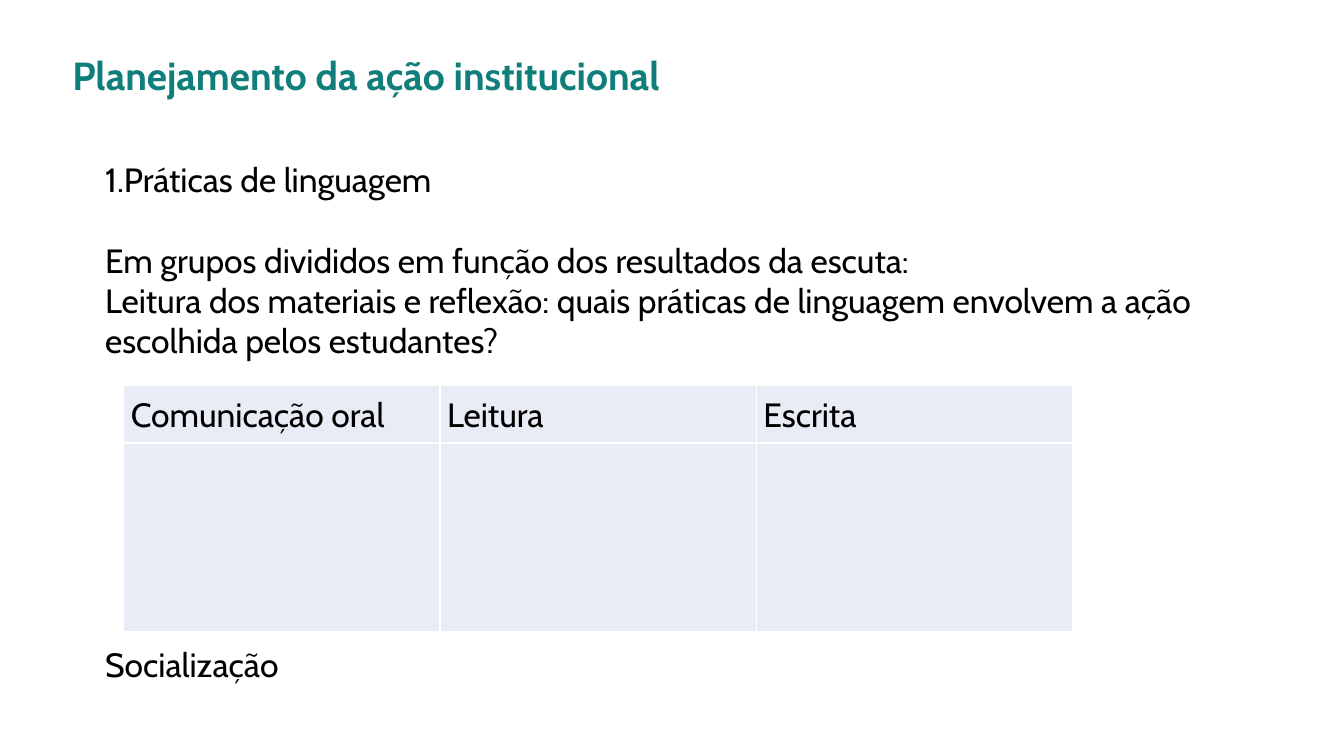
from dataclasses import dataclass

from lxml import etree
from pptx import Presentation
from pptx.dml.color import RGBColor
from pptx.enum.text import MSO_ANCHOR, MSO_AUTO_SIZE, PP_ALIGN
from pptx.oxml.ns import qn
from pptx.util import Cm, Pt

LEFT = PP_ALIGN.LEFT
MIDDLE = MSO_ANCHOR.MIDDLE
NO_FIT = MSO_AUTO_SIZE.NONE
TITLE_ONLY = 5


@dataclass(frozen=True)
class Theme:
    font: str = "Cabin"
    title_color: RGBColor = RGBColor(0x10, 0x7F, 0x7B)
    text_color: RGBColor = RGBColor(0, 0, 0)
    cell_color: RGBColor = RGBColor(0xE9, 0xEB, 0xF5)
    border_color: str = "FFFFFF"
    title_size: Pt = Pt(28)
    body_size: Pt = Pt(24)
    line_height: float = 28.9


def apply(target, values):
    for name, value in values.items():
        setattr(target, name, value)


class SlideBuilder:
    def __init__(self, deck, theme):
        self.theme = theme
        self.page = deck.slides.add_slide(deck.slide_layouts[TITLE_ONLY])

    def style(self, para, size, color, bold=False, **layout):
        apply(para, {"alignment": LEFT, **layout})
        apply(para.font, {"name": self.theme.font, "size": size, "bold": bold})
        para.font.color.rgb = color

    def frame(self, shape):
        apply(shape.text_frame, {"word_wrap": True, "auto_size": NO_FIT,
                                 "vertical_anchor": MIDDLE})
        return shape.text_frame

    def title(self, text, left, top, width, height):
        shape = self.page.shapes.title
        apply(shape, {"left": Cm(left), "top": Cm(top),
                      "width": Cm(width), "height": Cm(height)})
        para = self.frame(shape).paragraphs[0]
        para.text = text
        self.style(para, self.theme.title_size, self.theme.title_color,
                   bold=True, line_spacing=0.9)

    def number(self, para):
        properties = para._p.get_or_add_pPr()
        apply_indent = {"marL": "0", "indent": "0"}
        for name, value in apply_indent.items():
            properties.set(name, value)
        etree.SubElement(properties, qn("a:buFont"), typeface="+mj-lt")
        etree.SubElement(properties, qn("a:buAutoNum"), type="arabicPeriod")

    def body(self, entries, left, top, width, height):
        box = self.page.shapes.add_textbox(Cm(left), Cm(top), Cm(width), Cm(height))
        frame = self.frame(box)
        for index, (text, lines_before, numbered) in enumerate(entries):
            para = frame.add_paragraph() if index else frame.paragraphs[0]
            para.text = text
            if numbered:
                self.number(para)
            self.style(para, self.theme.body_size, self.theme.text_color)
            if lines_before:
                para.space_before = Pt(round(lines_before * self.theme.line_height, 1))

    def borders(self, cell):
        properties = cell._tc.get_or_add_tcPr()
        for position, side in enumerate(("lnL", "lnR", "lnT", "lnB")):
            line = etree.Element(qn(f"a:{side}"), w=str(Pt(1)))
            fill = etree.SubElement(line, qn("a:solidFill"))
            etree.SubElement(fill, qn("a:srgbClr"), val=self.theme.border_color)
            properties.insert(position, line)

    def table(self, headings, row_heights, left, top, width):
        shape = self.page.shapes.add_table(
            len(row_heights), len(headings),
            Cm(left), Cm(top), Cm(width), Cm(sum(row_heights)))
        table = shape.table
        apply(table, {"first_row": False, "horz_banding": False})
        for row, height in zip(table.rows, row_heights):
            row.height = Cm(height)
        for column in table.columns:
            column.width = Cm(width / len(headings))
        margins = dict.fromkeys(
            ("margin_left", "margin_right", "margin_top", "margin_bottom"), Cm(0.18))
        for cell in table.iter_cells():
            apply(cell, margins)
            cell.fill.solid()
            cell.fill.fore_color.rgb = self.theme.cell_color
            self.borders(cell)
        for cell, heading in zip(table.rows[0].cells, headings):
            para = cell.text_frame.paragraphs[0]
            para.text = heading
            self.style(para, self.theme.body_size, self.theme.text_color,
                       line_spacing=1.07)


def main():
    deck = Presentation()
    apply(deck, {"slide_width": Cm(33.87), "slide_height": Cm(19.05)})
    builder = SlideBuilder(deck, Theme())
    builder.title("Planejamento da ação institucional", 1.57, 0.38, 29.4, 3.18)
    builder.table(("Comunicação oral", "Leitura", "Escrita"),
                  (1.43, 4.76), left=3.12, top=9.7, width=23.91)
    builder.body((
        ("Práticas de linguagem", 0, True),
        ("Em grupos divididos em função dos resultados da escuta:", 1, False),
        ("Leitura dos materiais e reflexão: quais práticas de linguagem "
         "envolvem a ação escolhida pelos estudantes?", 0, False),
        ("Socialização", 7, False),
    ), 2.4, 3.05, 30.7, 15.14)
    deck.save("out.pptx")


if __name__ == "__main__":
    main()
